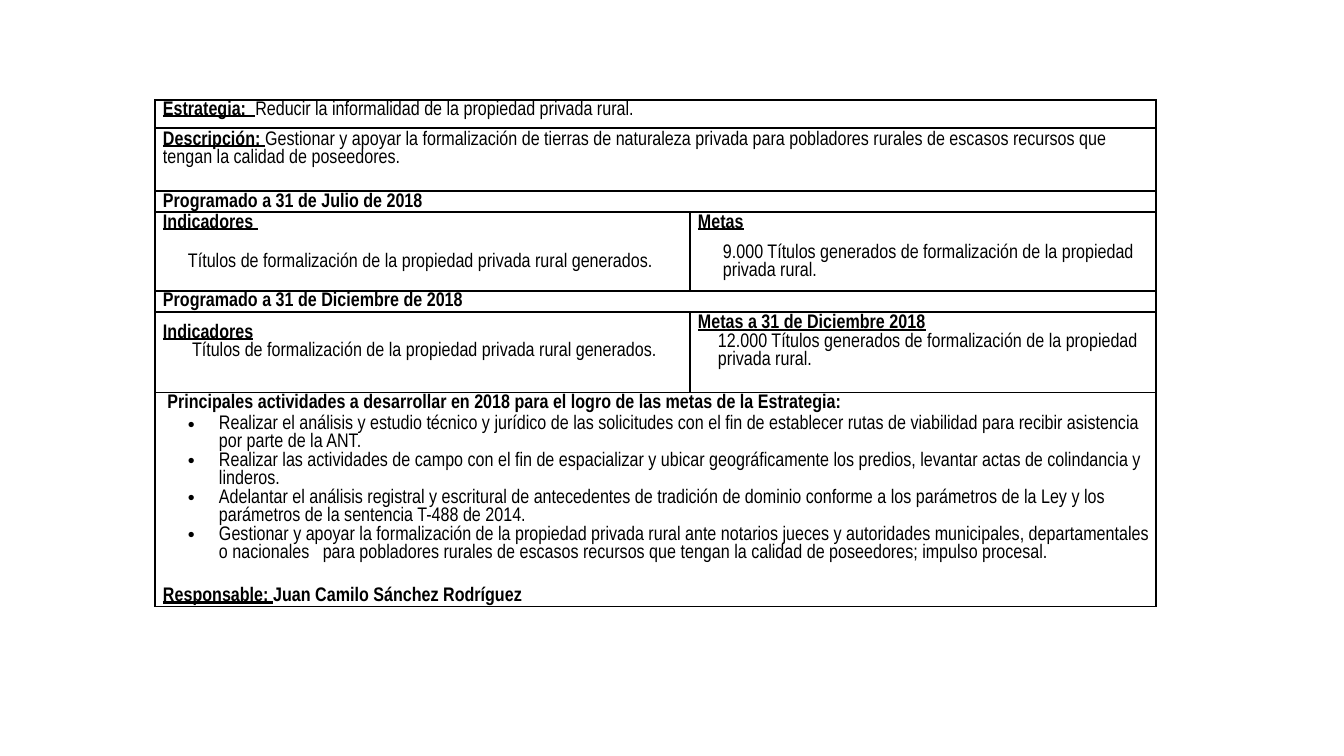
import pptx
import pptx.util
import pptx.dml.color
import pptx.enum.text
import pptx.oxml
import lxml.etree

PX = 9071  # EMU in one px, 100.8 px to the inch
COLORS = {"ink": "000000"}
FONT = "Arial Narrow"
NS = pptx.oxml.ns.qn

COLS = [535, 466]
ROWS = [28, 42, 21, 21, 21, 58, 21, 60, 21, 21, 148, 22, 22]
RULED = {0, 1, 3, 4, 6, 7, 9, 13}  # rows with a line above
SPLIT = {4, 5, 7, 8}               # rows with a line between columns
PAIRS = SPLIT | {3, 6}             # rows whose two cells stay apart

HEAD = {"bold": True, "under": True}
BOLD = {"bold": True}
TITLES = "Títulos de formalización de la propiedad privada rural generados."
GOAL = " Títulos generados de formalización de la propiedad privada rural."
TASKS = [
    "Realizar el análisis y estudio técnico y jurídico de las solicitudes con el fin de establecer "
    "rutas de viabilidad para recibir asistencia por parte de la ANT.",
    "Realizar las actividades de campo con el fin de espacializar y ubicar geográficamente los "
    "predios, levantar actas de colindancia y linderos.",
    "Adelantar el análisis registral y escritural de antecedentes de tradición de dominio conforme "
    "a los parámetros de la Ley y los parámetros de la sentencia T-488 de 2014.",
    "Gestionar y apoyar la formalización de la propiedad privada rural ante notarios jueces y "
    "autoridades municipales, departamentales o nacionales   para pobladores rurales de escasos "
    "recursos que tengan la calidad de poseedores; impulso procesal.",
]

# (row, column): paragraphs, each a list of runs and its layout
CELLS = {
    (0, 0): [([("Estrategia:  ", HEAD),
               ("Reducir la informalidad de la propiedad privada rural.", {})], {})],
    (1, 0): [([("Descripción: ", HEAD),
               ("Gestionar y apoyar la formalización de tierras de naturaleza privada para "
                "pobladores rurales de escasos recursos que tengan la calidad de poseedores.", {})], {})],
    (3, 0): [([("Programado a 31 de Julio de 2018", BOLD)], {})],
    (4, 0): [([("Indicadores ", HEAD)], {})],
    (4, 1): [([("Metas", HEAD)], {})],
    (5, 0): [([(TITLES, {})], {})],
    (5, 1): [([("9.000" + GOAL, {})], {})],
    (6, 0): [([("Programado a 31 de Diciembre de 2018", BOLD)], {})],
    (7, 0): [([("Indicadores", HEAD)], {}), ([(TITLES, {})], {"left": 29})],
    (7, 1): [([("Metas a 31 de Diciembre 2018", HEAD)], {}),
             ([("12.000" + GOAL, {})], {"left": 20})],
    (9, 0): [([(" Principales actividades a desarrollar en 2018 para el logro de las metas "
                "de la Estrategia:", BOLD)], {})],
    (10, 0): [([(task, {})], {"left": 31, "bullet": True}) for task in TASKS],
    (12, 0): [([("Responsable: ", HEAD), ("Juan Camilo Sánchez Rodríguez", BOLD)], {})],
}


def style(font, size=14, bold=False, under=False):
    font.name, font.size = FONT, pptx.util.Pt(size)
    font.bold, font.underline = bold, under
    font.color.rgb = pptx.dml.color.RGBColor.from_string(COLORS["ink"])


def write(para, text, **look):
    run = para.add_run()
    run.text = text
    style(run.font, **look)


def indent(para, left=0, bullet=False):
    props = para._p.get_or_add_pPr()
    props.set("marL", str(left * PX))
    props.set("indent", str(-left * PX if bullet else 0))
    if bullet:
        face = lxml.etree.SubElement(props, NS("a:buFont"))
        face.set("typeface", "Arial")
        lxml.etree.SubElement(props, NS("a:buChar")).set("char", "•")


def border(cell, sides):
    props = cell._tc.get_or_add_tcPr()
    for spot, side in enumerate("LRTB"):
        line = lxml.etree.Element(NS("a:ln" + side), w="12700")
        if side in sides:
            fill = lxml.etree.SubElement(line, NS("a:solidFill"))
            lxml.etree.SubElement(fill, NS("a:srgbClr")).set("val", COLORS["ink"])
        else:
            lxml.etree.SubElement(line, NS("a:noFill"))
        props.insert(spot, line)


def fill_cell(cell, paras, inset):
    cell.fill.background()
    cell.vertical_anchor = pptx.enum.text.MSO_ANCHOR.MIDDLE
    cell.margin_left = inset * PX
    cell.margin_top = cell.margin_right = PX
    cell.margin_bottom = 0
    frame = cell.text_frame
    if not paras:
        style(frame.paragraphs[0].font, size=8)
    for spot, (runs, layout) in enumerate(paras):
        para = frame.add_paragraph() if spot else frame.paragraphs[0]
        indent(para, **layout)
        for text, look in runs:
            write(para, text, **look)


def plan_table(slide, left, top):
    frame = slide.shapes.add_table(len(ROWS), len(COLS), left * PX, top * PX,
                                   sum(COLS) * PX, sum(ROWS) * PX)
    table = frame.table
    table.first_row = table.horz_banding = False
    for col, width in zip(table.columns, COLS):
        col.width = width * PX
    for r, height in enumerate(ROWS):
        table.rows[r].height = height * PX
        if r not in PAIRS:
            table.cell(r, 0).merge(table.cell(r, 1))
        for c in range(len(COLS)):
            cell = table.cell(r, c)
            fill_cell(cell, CELLS.get((r, c), []), 33 if r in (5, 10) else 8)
            sides = {"LR"[c]}
            if r in SPLIT or (r not in PAIRS and c == 0):
                sides |= {"L", "R"}
            if r in RULED:
                sides.add("T")
            if r + 1 in RULED:
                sides.add("B")
            border(cell, sides)
    table.cell(0, 0).vertical_anchor = pptx.enum.text.MSO_ANCHOR.TOP


def main():
    deck = pptx.Presentation()
    deck.slide_width, deck.slide_height = 1344 * PX, 756 * PX
    slide = deck.slides.add_slide(deck.slide_layouts[6])
    plan_table(slide, 155, 100)
    deck.save("out.pptx")


if __name__ == "__main__":
    main()
